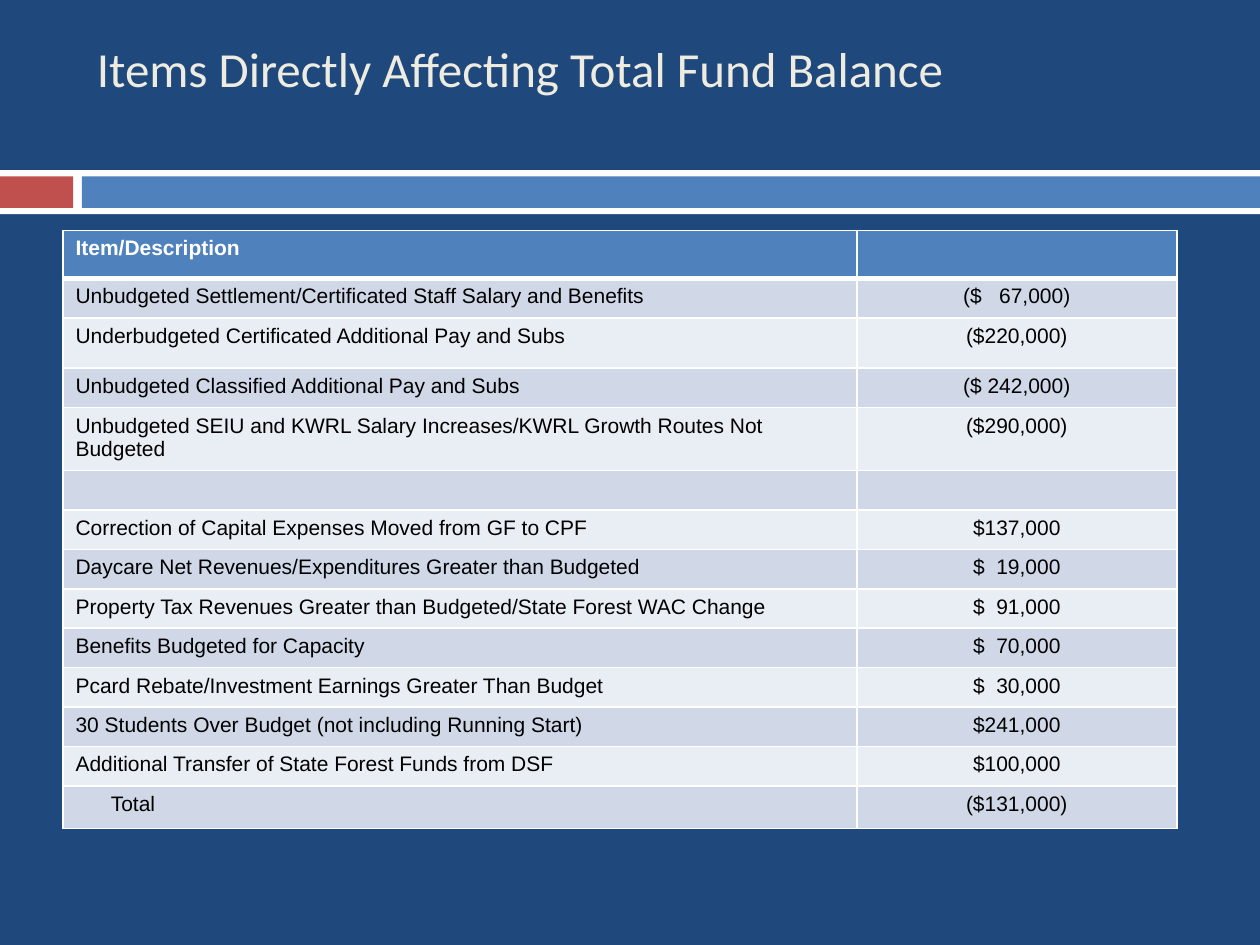
from dataclasses import dataclass

from lxml import etree
from pptx import Presentation, util as u
from pptx.dml.color import RGBColor
from pptx.enum import shapes, text
from pptx.oxml.ns import qn

COLORS = {
    "background": "1F497D",
    "white": "FFFFFF",
    "red": "C0504D",
    "blue": "4F81BD",
    "cream": "EEECE1",
    "black": "000000",
    "dark_band": "D0D8E8",
    "light_band": "E9EDF4",
}


@dataclass
class Bar:
    left: float
    top: float
    width: float
    height: float
    color: str


@dataclass
class Item:
    description: str
    amount: str = ""
    height: float = 0
    indent: float = 0


BARS = [
    Bar(0, 1.35, 10, 0.35, "white"),
    Bar(0, 1.4, 0.58, 0.25, "red"),
    Bar(0.65, 1.4, 9.35, 0.25, "blue"),
]
ITEMS = [
    Item("Item/Description", height=0.38),
    Item("Unbudgeted Settlement/Certificated Staff Salary and Benefits", "($   67,000)"),
    Item("Underbudgeted Certificated Additional Pay and Subs", "($220,000)", height=0.4),
    Item("Unbudgeted Classified Additional Pay and Subs", "($ 242,000)"),
    Item("Unbudgeted SEIU and KWRL Salary Increases/KWRL Growth Routes Not Budgeted", "($290,000)"),
    Item(""),
    Item("Correction of Capital Expenses Moved from GF to CPF", "$137,000"),
    Item("Daycare Net Revenues/Expenditures Greater than Budgeted", "$  19,000"),
    Item("Property Tax Revenues Greater than Budgeted/State Forest WAC Change", "$  91,000"),
    Item("Benefits Budgeted for Capacity", "$  70,000"),
    Item("Pcard Rebate/Investment Earnings Greater Than Budget", "$  30,000"),
    Item("30 Students Over Budget (not including Running Start)", "$241,000"),
    Item("Additional Transfer of State Forest Funds from DSF", "$100,000"),
    Item("Total", "($131,000)", height=0.34, indent=0.28),
]
TABLE_HEIGHT = 4.56
COLUMN_WIDTHS = (6.3, 2.54)


def rgb(name: str) -> RGBColor:
    return RGBColor.from_string(COLORS[name])


def write_text(frame, content: str, *, size: float, font: str, color: str,
               bold: bool = False, align=text.PP_ALIGN.LEFT) -> None:
    paragraph = frame.paragraphs[0]
    paragraph.alignment = align
    if not content:
        etree.SubElement(paragraph._p, qn("a:endParaRPr"), sz=str(int(size * 100)))
        return
    run = paragraph.add_run()
    run.text = content
    run.font.size = u.Pt(size)
    run.font.name = font
    run.font.bold = bold
    run.font.color.rgb = rgb(color)


def draw_bar(slide, bar: Bar) -> None:
    shape = slide.shapes.add_shape(
        shapes.MSO_SHAPE.RECTANGLE,
        *(u.Inches(length) for length in (bar.left, bar.top, bar.width, bar.height)))
    shape.shadow.inherit = False
    shape.fill.solid()
    shape.fill.fore_color.rgb = rgb(bar.color)
    shape.line.fill.background()


def draw_title(slide, content: str) -> None:
    box = slide.shapes.add_textbox(u.Inches(0.67), u.Inches(0.25), u.Inches(8.92), u.Inches(0.58))
    frame = box.text_frame
    frame.word_wrap = True
    frame.vertical_anchor = text.MSO_ANCHOR.MIDDLE
    write_text(frame, content, size=28, font="Calibri", color="cream")


def set_borders(cell, widths: dict[str, float]) -> None:
    properties = cell._tc.get_or_add_tcPr()
    for side, width in widths.items():
        line = etree.SubElement(properties, qn(f"a:ln{side}"), w=str(u.Pt(width)))
        fill = etree.SubElement(line, qn("a:solidFill"))
        etree.SubElement(fill, qn("a:srgbClr"), val=COLORS["white"])


def draw_table(slide, items: list[Item]) -> None:
    frame = slide.shapes.add_table(
        len(items), len(COLUMN_WIDTHS), u.Inches(0.5), u.Inches(1.83),
        u.Inches(sum(COLUMN_WIDTHS)), u.Inches(TABLE_HEIGHT))
    table = frame.table
    for column, width in zip(table.columns, COLUMN_WIDTHS):
        column.width = u.Inches(width)
    plain_rows = sum(not item.height for item in items)
    plain_height = (TABLE_HEIGHT - sum(item.height for item in items)) / plain_rows
    for index, item in enumerate(items):
        header = index == 0
        table.rows[index].height = u.Inches(item.height or plain_height)
        band = "blue" if header else "dark_band" if index % 2 else "light_band"
        borders = {"L": 1, "R": 1, "T": 3 if index == 1 else 1, "B": 3 if header else 1}
        columns = (
            (item.description, text.PP_ALIGN.LEFT, item.indent),
            (item.amount, text.PP_ALIGN.CENTER, 0),
        )
        for column, (content, align, indent) in enumerate(columns):
            cell = table.cell(index, column)
            set_borders(cell, borders)
            cell.fill.solid()
            cell.fill.fore_color.rgb = rgb(band)
            cell.margin_left = u.Inches(0.1 + indent)
            write_text(cell.text_frame, content, size=12, font="Arial",
                       color="white" if header else "black", bold=header, align=align)


def main() -> None:
    presentation = Presentation()
    presentation.slide_width = u.Inches(10)
    presentation.slide_height = u.Inches(7.5)
    slide = presentation.slides.add_slide(presentation.slide_layouts[6])
    slide.background.fill.solid()
    slide.background.fill.fore_color.rgb = rgb("background")
    for bar in BARS:
        draw_bar(slide, bar)
    draw_title(slide, "Items Directly Affecting Total Fund Balance")
    draw_table(slide, ITEMS)
    presentation.save("out.pptx")


if __name__ == "__main__":
    main()
